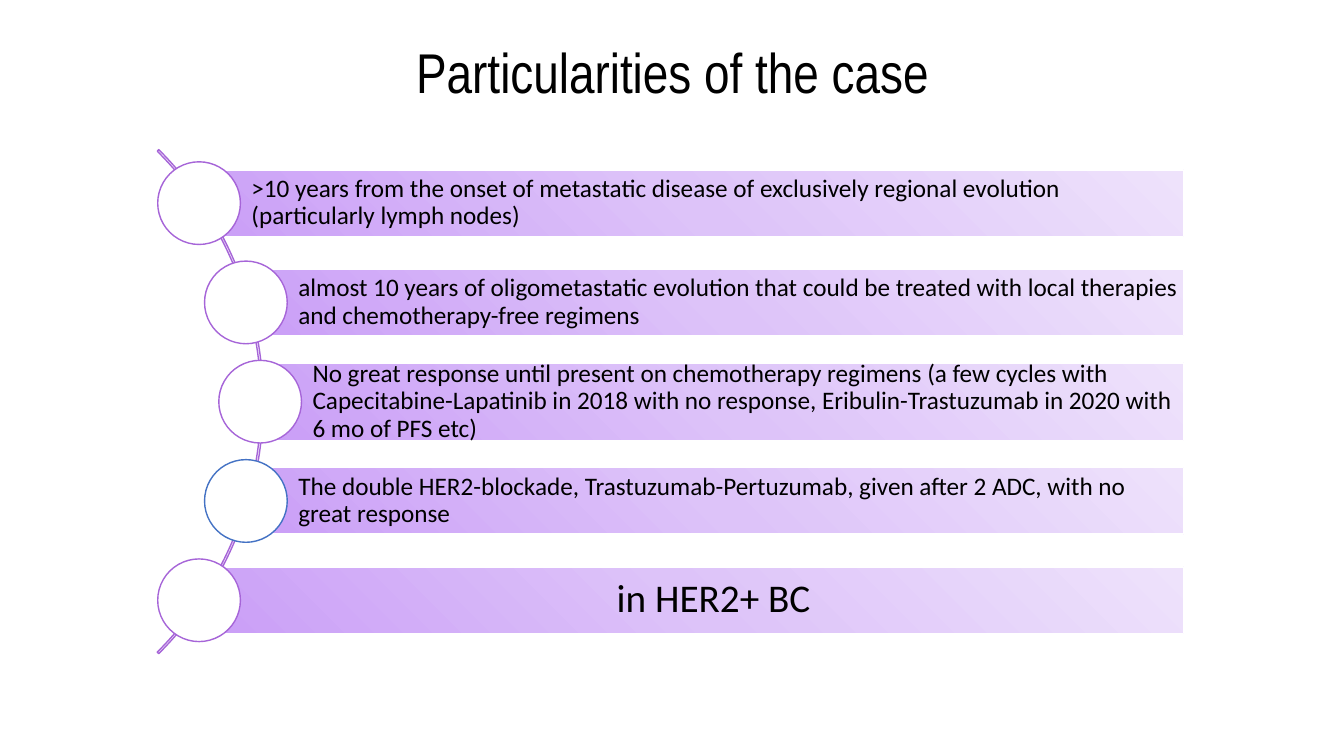
"""Builds the slide on the particularities of the case."""
from copy import deepcopy
from dataclasses import dataclass
from math import sqrt

from pptx import Presentation
from pptx.dml.color import RGBColor
from pptx.enum.shapes import MSO_SHAPE
from pptx.enum.text import MSO_ANCHOR, PP_ALIGN
from pptx.oxml.ns import qn
from pptx.util import Inches, Pt

ARC, BAR, CIRCLE = MSO_SHAPE.BLOCK_ARC, MSO_SHAPE.RECTANGLE, MSO_SHAPE.OVAL
LEFT, CENTER = PP_ALIGN.LEFT, PP_ALIGN.CENTER
MIDDLE, TOP = MSO_ANCHOR.MIDDLE, MSO_ANCHOR.TOP


@dataclass(frozen=True)
class Theme:
    """Holds the colours, fonts and type sizes."""
    text: str = "000000"
    white: str = "FFFFFF"
    purple: str = "A665D8"
    blue: str = "4472C4"
    gradient: tuple = ("CA9EF7", "DDC3F9", "EEE2FB")
    title_font: str = "Arial Narrow"
    body_font: str = "Calibri"
    title_size: int = 40
    body_size: int = 18
    closing_size: int = 28


THEME = Theme()
ARC_CENTER_X, ARC_CENTER_Y, ARC_SIZE = -0.925, 3.985, 7.07
CIRCLE_PATH_RADIUS = 3.505
CIRCLE_SIZE = 0.82
ROW_PITCH = 0.985
BAR_RIGHT, BAR_HEIGHT, TALL_BAR_HEIGHT = 11.74, 0.66, 0.77
ROWS = [
    (">10 years from the onset of metastatic disease of exclusively regional "
     "evolution (particularly lymph nodes)", {}),
    ("almost 10 years of oligometastatic evolution that could be treated with "
     "local therapies and chemotherapy-free regimens", {}),
    ("No great response until present on chemotherapy regimens (a few cycles "
     "with Capecitabine-Lapatinib in 2018 with no response, "
     "Eribulin-Trastuzumab in 2020 with 6 mo of PFS etc)",
     {"height": TALL_BAR_HEIGHT}),
    ("The double HER2-blockade, Trastuzumab-Pertuzumab, given after 2 ADC, "
     "with no great response", {"outline": THEME.blue}),
    ("in HER2+ BC",
     {"size": THEME.closing_size, "align": CENTER, "inset": 0.08}),
]


def write_text(shape, text, *, font, size, color, align=LEFT, anchor=MIDDLE,
               left_inset=0.1, inset=0.05, line_spacing=1.0):
    """Puts one formatted paragraph into a shape."""
    frame = shape.text_frame
    frame.word_wrap = True
    frame.vertical_anchor = anchor
    frame.margin_left = Inches(left_inset)
    frame.margin_top = frame.margin_right = frame.margin_bottom = Inches(inset)
    paragraph = frame.paragraphs[0]
    paragraph.alignment = align
    paragraph.line_spacing = line_spacing
    run = paragraph.add_run()
    run.text = text
    run.font.name = font
    run.font.size = Pt(size)
    run.font.color.rgb = RGBColor.from_string(color)


class SlideBuilder:
    """Draws the elements of the current slide in one style."""

    def __init__(self, slide, theme):
        self.slide = slide
        self.theme = theme

    def title(self, text):
        box = self.slide.shapes.add_textbox(
            Inches(0.67), Inches(0.3), Inches(12), Inches(0.82))
        write_text(box, text, font=self.theme.title_font,
                   size=self.theme.title_size, color=self.theme.text,
                   align=CENTER, anchor=MIDDLE, left_inset=0.1, inset=0.1)

    def outlined(self, kind, left, top, width, height, outline):
        shape = self.slide.shapes.add_shape(
            kind, Inches(left), Inches(top), Inches(width), Inches(height))
        shape.shadow.inherit = False
        shape.line.color.rgb = RGBColor.from_string(outline)
        shape.line.width = Pt(1)
        return shape

    def arc(self):
        shape = self.outlined(
            ARC, ARC_CENTER_X - ARC_SIZE / 2, ARC_CENTER_Y - ARC_SIZE / 2,
            ARC_SIZE, ARC_SIZE, self.theme.purple)
        shape.fill.background()
        for index, value in enumerate((189, 27, 0.003)):
            shape.adjustments[index] = value

    def bar(self, left, center_y, height):
        shape = self.outlined(BAR, left, center_y - height / 2,
                              BAR_RIGHT - left, height, self.theme.white)
        shape.fill.gradient()
        shape.fill.gradient_angle = 45
        stop_list = shape._element.spPr.find(qn("a:gradFill")).find(qn("a:gsLst"))
        stop_list.append(deepcopy(stop_list[0]))
        for index, stop in enumerate(shape.fill.gradient_stops):
            stop.position = index / 2
            stop.color.rgb = RGBColor.from_string(self.theme.gradient[index])
        return shape

    def circle(self, center_x, center_y, outline):
        shape = self.outlined(
            CIRCLE, center_x - CIRCLE_SIZE / 2, center_y - CIRCLE_SIZE / 2,
            CIRCLE_SIZE, CIRCLE_SIZE, outline)
        shape.fill.solid()
        shape.fill.fore_color.rgb = RGBColor.from_string(self.theme.white)

    def row(self, offset, text, height=BAR_HEIGHT, outline=THEME.purple,
            size=THEME.body_size, align=LEFT, inset=0.05):
        center_x = ARC_CENTER_X + sqrt(CIRCLE_PATH_RADIUS ** 2 - offset ** 2)
        center_y = ARC_CENTER_Y + offset
        bar = self.bar(center_x, center_y, height)
        write_text(bar, text, font=self.theme.body_font, size=size,
                   color=self.theme.text, align=align, left_inset=0.52,
                   inset=inset, line_spacing=0.9)
        self.circle(center_x, center_y, outline)


def main():
    """Builds and saves the presentation."""
    presentation = Presentation()
    presentation.slide_width = Inches(13.33)
    presentation.slide_height = Inches(7.5)
    slide = presentation.slides.add_slide(presentation.slide_layouts[6])
    builder = SlideBuilder(slide, THEME)
    builder.title("Particularities of the case")
    builder.arc()
    for index, (text, options) in enumerate(ROWS):
        builder.row((index - len(ROWS) // 2) * ROW_PITCH, text, **options)
    presentation.save("out.pptx")


if __name__ == "__main__":
    main()
